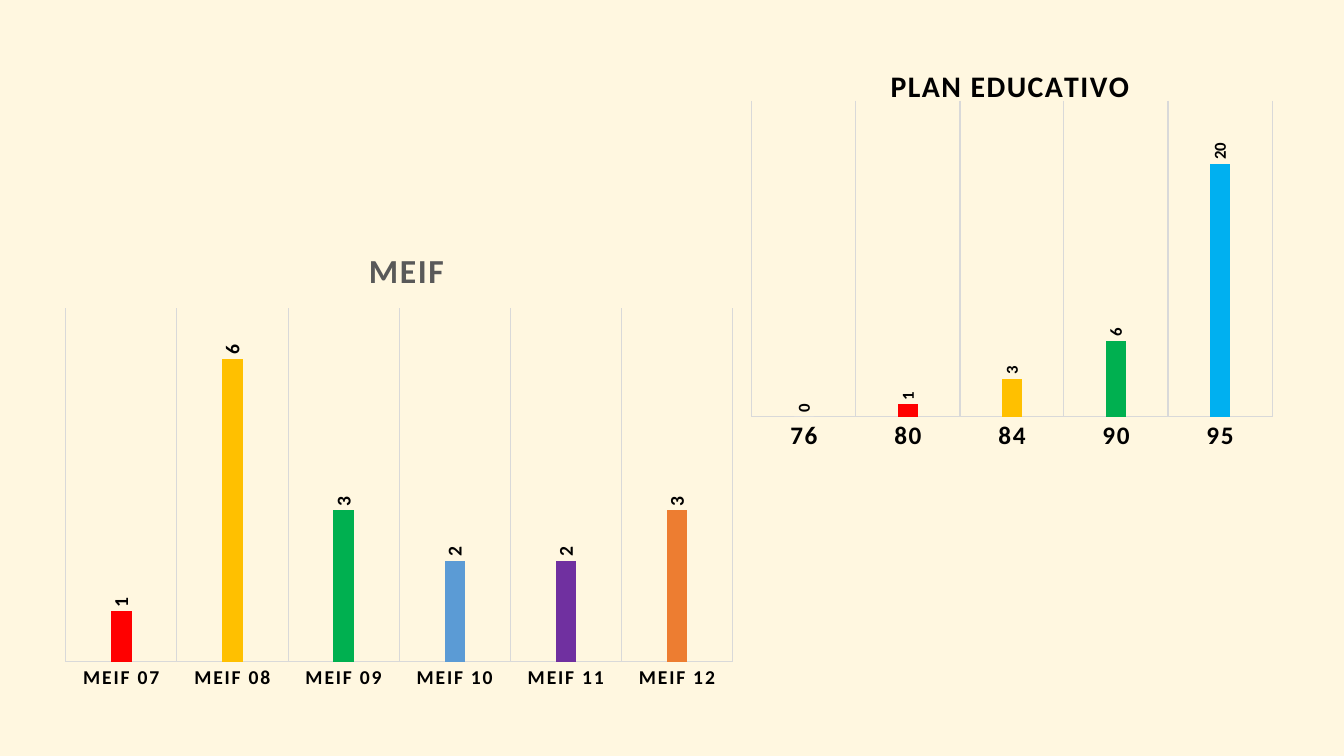
import pptx
import pptx.chart.data
import pptx.dml.color
import pptx.enum.chart
import pptx.oxml
import pptx.oxml.ns
import pptx.util

PX = 9071  # EMU per px, at 100.8 px to the inch
FONT = "Calibri"
BLACK = "000000"
GRID = "D9D9D9"
LETTER_SPACING = "120"


def colour(hex_text):
    return pptx.dml.color.RGBColor.from_string(hex_text)


def px(*lengths):
    return [pptx.util.Emu(length * PX) for length in lengths]


def style_font(font, size, hex_text):
    font.name = FONT
    font.size = pptx.util.Pt(size)
    font.bold = True
    font.color.rgb = colour(hex_text)


def style_line(line):
    line.color.rgb = colour(GRID)
    line.width = pptx.util.Pt(0.75)


def set_layout(parent, position, before, inner=False):
    """Place a chart part by fractions of the chart: x, y and maybe w, h."""
    for old in parent.findall(pptx.oxml.ns.qn("c:layout")):
        parent.remove(old)
    target = '<c:layoutTarget val="inner"/>' if inner else ""
    modes = '<c:xMode val="edge"/><c:yMode val="edge"/>'
    values = "".join(f'<c:{key} val="{value}"/>' for key, value in zip("xywh", position))
    layout = pptx.oxml.parse_xml(
        f'<c:layout {pptx.oxml.ns.nsdecls("c")}><c:manualLayout>'
        f"{target}{modes}{values}</c:manualLayout></c:layout>"
    )
    parent.xpath(before)[0].addprevious(layout)


def add_count_chart(slide, box, title, title_size, title_colour, title_at, plot_at,
                    bars, top_value, category_size, label_size):
    counts = pptx.chart.data.CategoryChartData(number_format="General")
    counts.categories = [name for name, _, _ in bars]
    counts.add_series("Series 1", [value for _, value, _ in bars])
    chart = slide.shapes.add_chart(
        pptx.enum.chart.XL_CHART_TYPE.COLUMN_CLUSTERED, *px(*box), counts).chart
    chart.has_legend = False
    chart.font.name = FONT
    chart.font.size = pptx.util.Pt(10)
    chart.font.color.rgb = colour(BLACK)

    # Title
    chart.has_title = True
    heading = chart.chart_title.text_frame
    heading.text = title
    heading_font = heading.paragraphs[0].runs[0].font
    style_font(heading_font, title_size, title_colour)
    heading_font._element.set("spc", LETTER_SPACING)
    chart.chart_title.include_in_layout = False
    chart_xml = chart._chartSpace.chart
    set_layout(chart_xml.xpath("c:title")[0], title_at, "c:overlay")
    set_layout(chart_xml.plotArea, plot_at, "c:barChart", inner=True)

    # Axes
    categories = chart.category_axis
    categories.major_tick_mark = pptx.enum.chart.XL_TICK_MARK.NONE
    categories.has_major_gridlines = True
    style_line(categories.major_gridlines.format.line)
    style_line(categories.format.line)
    style_font(categories.tick_labels.font, category_size, BLACK)
    categories.tick_labels.font._element.set("spc", LETTER_SPACING)
    scale = chart.value_axis
    scale.minimum_scale, scale.maximum_scale = 0, top_value
    scale.has_major_gridlines = False
    scale.visible = False

    # Bars
    plot = chart.plots[0]
    plot.gap_width = 444
    plot.overlap = -90
    plot.vary_by_categories = False
    series = plot.series[0]
    series.invert_if_negative = False
    for index, (_, _, hex_text) in enumerate(bars):
        fill = series.points[index].format.fill
        fill.solid()
        fill.fore_color.rgb = colour(hex_text)

    # Upright value labels
    labels = series.data_labels
    labels.show_value = True
    labels.position = pptx.enum.chart.XL_LABEL_POSITION.OUTSIDE_END
    style_font(labels.font, label_size, BLACK)
    label_body = labels._element.xpath("c:txPr/a:bodyPr")[0]
    label_body.set("rot", "-5400000")
    label_body.set("vert", "horz")


def add_study_plan(slide, box):
    add_count_chart(
        slide, box, "PLAN EDUCATIVO", 21.3, BLACK, (0.28, 0.05),
        (0.038, 0.144, 0.944, 0.725),
        [("76", 0, "FFFFFF"), ("80", 1, "FF0000"), ("84", 3, "FFC000"),
         ("90", 6, "00B050"), ("95", 20, "00B0F0")],
        top_value=25, category_size=18, label_size=12)


def add_meif(slide, box):
    add_count_chart(
        slide, box, "MEIF", 24, "595959", (0.445, 0.05),
        (0.017, 0.178, 0.961, 0.683),
        [("MEIF 07", 1, "FF0000"), ("MEIF 08", 6, "FFC000"), ("MEIF 09", 3, "00B050"),
         ("MEIF 10", 2, "5B9BD5"), ("MEIF 11", 2, "7030A0"), ("MEIF 12", 3, "ED7D31")],
        top_value=7, category_size=14, label_size=14)


def main():
    deck = pptx.Presentation()
    deck.slide_width, deck.slide_height = px(1344, 756)
    slide = deck.slides.add_slide(deck.slide_layouts[6])
    slide.background.fill.solid()
    slide.background.fill.fore_color.rgb = colour("FFF7E0")
    add_study_plan(slide, (731, 38, 551, 436))
    add_meif(slide, (54, 216, 694, 518))
    deck.save("out.pptx")


if __name__ == "__main__":
    main()
